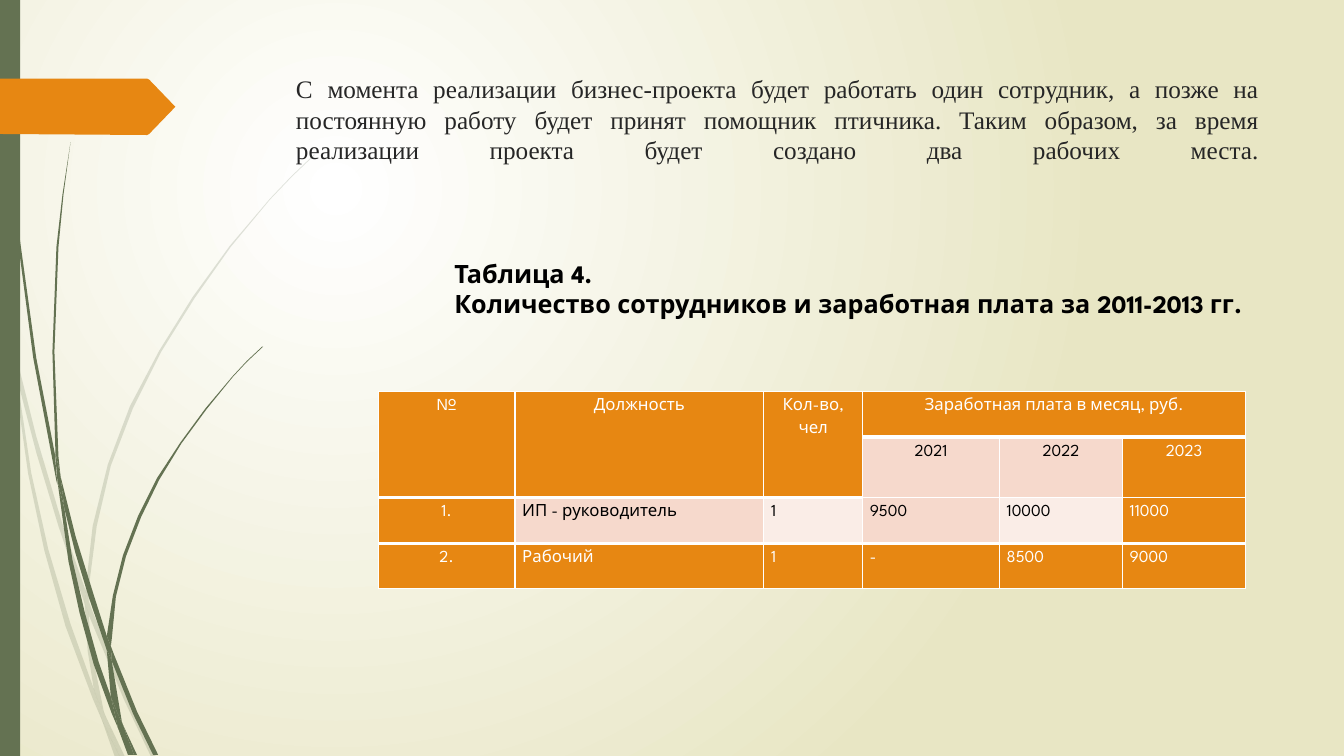
from dataclasses import dataclass

from lxml.etree import SubElement
from pptx import Presentation
from pptx.dml.color import RGBColor
from pptx.enum.shapes import MSO_SHAPE
from pptx.enum.text import MSO_ANCHOR, PP_ALIGN
from pptx.oxml.ns import qn
from pptx.util import Cm, Pt


@dataclass(frozen=True)
class Theme:
    green: str = "647252"
    orange: str = "E78712"
    rose: str = "F6D9CC"
    pale_rose: str = "FAEDE7"
    white: str = "FFFFFF"
    black: str = "000000"
    title_ink: str = "262626"
    sand: str = "E8E6C4"
    title_font: str = "Times New Roman"
    body_font: str = "League Spartan"
    heading_size: int = 18
    table_size: int = 12


THEME = Theme()
SLIDE_WIDTH, SLIDE_HEIGHT = 33.87, 19.05

# Outlines of the grass, in grid units of GRID centimetres from the slide corner.
GRID = 2.54
PALE_GRASS = [
    [(0.11, 3.5), (0.09, 3.22), (0, 2.82), (0, 2.99), (0.1, 3.44)],
    [(0.58, 5.22), (0.84, 5.99), (0.85, 5.86), (0.62, 5.2), (0.36, 4.33), (0.14, 3.45),
     (0.17, 3.76), (0.36, 4.49)],
    [(0.92, 6.07), (0.88, 5.96), (0.88, 6.1), (1.23, 6.94), (1.5, 7.51), (1.55, 7.51),
     (1.27, 6.92)],
    [(1.19, 7.51), (1.24, 7.51), (1.05, 7.11)],
    [(0.93, 6.83), (0.7, 6.19), (0.48, 5.45), (0.31, 4.69), (0.17, 3.76), (0.11, 3.5),
     (0.28, 4.7), (0.44, 5.46), (0.65, 6.21), (0.92, 6.93), (1.01, 7.14), (0.99, 7.07)],
    [(0.84, 5.99), (0.87, 6.46), (0.93, 6.83), (0.96, 6.92), (1.05, 7.11), (1.03, 7.06),
     (0.91, 6.46), (0.88, 6.1), (0.88, 6.08)],
    [(0.88, 5.84), (0.96, 5.22), (1.1, 4.62), (1.32, 4.05), (1.6, 3.49), (1.93, 2.96),
     (2.29, 2.45), (2.68, 1.98), (2.9, 1.75), (3.12, 1.54), (3.12, 1.53), (2.89, 1.75),
     (2.68, 1.97), (2.28, 2.44), (1.91, 2.95), (1.58, 3.48), (1.29, 4.03), (1.07, 4.61),
     (0.92, 5.22), (0.85, 5.84), (0.85, 5.86), (0.88, 5.96)],
    [(1.01, 7.14), (1.14, 7.51), (1.19, 7.51)],
    [(0.88, 6.08), (0.88, 6.1), (0.88, 5.96), (0.85, 5.86), (0.84, 5.99)],
    [(0.96, 6.92), (0.93, 6.83), (0.99, 7.07), (1.01, 7.14), (1.19, 7.51), (1.05, 7.11)],
]
DARK_GRASS = [
    [(0.07, 1.1), (0.17, 2.33), (0.33, 3.55), (0.56, 4.77), (0.57, 4.81), (0.55, 4.57),
     (0.55, 4.53), (0.36, 3.55), (0.19, 2.32), (0.08, 1.09), (0.05, 0.48), (0.04, 0),
     (0.03, 0), (0.04, 0.48)],
    [(0.88, 5.92), (1.06, 6.45), (1.06, 6.33), (1.06, 6.31), (0.93, 5.9), (0.75, 5.32),
     (0.6, 4.72), (0.64, 5.05), (0.75, 5.49)],
    [(1.13, 6.49), (1.1, 6.41), (1.11, 6.56), (1.32, 7.08), (1.52, 7.49), (1.57, 7.49),
     (1.36, 7.06)],
    [(1.1, 6.91), (0.98, 6.57), (0.84, 6.07), (0.72, 5.56), (0.64, 5.05), (0.57, 4.77),
     (0.68, 5.57), (0.79, 6.08), (0.93, 6.59), (1.11, 7.08), (1.17, 7.22), (1.16, 7.17)],
    [(0.6, 4.72), (0.58, 4.53), (0.54, 3.49), (0.58, 2.45), (0.63, 1.93), (0.7, 1.41),
     (0.62, 1.93), (0.56, 2.45), (0.52, 3.49), (0.55, 4.49)],
    [(1.33, 7.49), (1.36, 7.49), (1.22, 7.19)],
    [(0.57, 4.77), (0.64, 5.05), (0.6, 4.72), (0.55, 4.49), (0.55, 4.53)],
    [(1.11, 6.33), (1.15, 5.92), (1.25, 5.52), (1.4, 5.13), (1.58, 4.76), (1.8, 4.4),
     (2.05, 4.06), (2.31, 3.74), (2.45, 3.59), (2.61, 3.44), (2.6, 3.44), (2.45, 3.58),
     (2.31, 3.73), (2.04, 4.05), (1.79, 4.39), (1.56, 4.74), (1.37, 5.12), (1.22, 5.51),
     (1.12, 5.91), (1.06, 6.31), (1.1, 6.41)],
    [(1.17, 7.22), (1.27, 7.49), (1.31, 7.49)],
    [(1.06, 6.45), (1.1, 6.91), (1.16, 7.06), (1.22, 7.19), (1.21, 7.16), (1.11, 6.56),
     (1.09, 6.51)],
    [(1.06, 6.45), (1.09, 6.51), (1.11, 6.56), (1.1, 6.41), (1.06, 6.31), (1.06, 6.33)],
    [(1.16, 7.06), (1.1, 6.91), (1.16, 7.17), (1.17, 7.22), (1.3, 7.49), (1.33, 7.49),
     (1.22, 7.19)],
]
ARROW = [(1.74, 1.06), (1.48, 1.33), (1.46, 1.34), (0, 1.33), (0, 0.78), (1.46, 0.78),
         (1.48, 0.79)]

TITLE = ("С момента реализации бизнес-проекта будет работать один сотрудник, а позже на "
         "постоянную работу будет принят помощник птичника. Таким образом, за время "
         "реализации проекта будет создано два рабочих места.")
CAPTION = "Таблица 4.\nКоличество сотрудников и заработная плата за 2011-2013 гг."

COLUMN_WIDTHS = [3.45, 6.27, 2.49, 3.45, 3.1, 3.1]
ROW_HEIGHTS = [1.15, 1.3, 1.16, 1.14]
HEADER_ROWS = 2
MERGES = [(0, 0, 1, 0), (0, 1, 1, 1), (0, 2, 1, 2), (0, 3, 0, 5)]
STAFF = [
    ["№", "Должность", "Кол-во, чел", "Заработная плата в месяц, руб.", "", ""],
    ["", "", "", "2021", "2022", "2023"],
    ["1.", "ИП - руководитель", "1", "9500", "10000", "11000"],
    ["2.", "Рабочий", "1", "-", "8500", "9000"],
]
LIGHT_CELLS = {(1, 3): THEME.rose, (1, 4): THEME.rose, (2, 1): THEME.rose,
               (2, 2): THEME.pale_rose, (2, 3): THEME.rose, (2, 4): THEME.pale_rose}


def color(code):
    return RGBColor.from_string(code)


def paint(shape, code):
    shape.shadow.inherit = False
    shape.fill.solid()
    shape.fill.fore_color.rgb = color(code)
    shape.line.fill.background()


def style_paragraph(paragraph, font_name, size, code, bold=False):
    for run in paragraph.runs:
        run.font.name = font_name
        run.font.size = Pt(size)
        run.font.color.rgb = color(code)
        run.font.bold = bold


def add_background(slide):
    fill = slide.background.fill
    fill.gradient()
    for stop, code in zip(fill.gradient_stops, (THEME.white, THEME.sand)):
        stop.color.rgb = color(code)
    gradient = slide.element.find(".//" + qn("a:gradFill"))
    gradient.remove(gradient.find(qn("a:lin")))
    circle = SubElement(gradient, qn("a:path"), path="circle")
    SubElement(circle, qn("a:fillToRect"), l="50000", t="50000", r="100000", b="100000")


def add_outline(slide, outline, code):
    points = [(Cm(x * GRID), Cm(y * GRID)) for x, y in outline]
    builder = slide.shapes.build_freeform(*points[0])
    builder.add_line_segments(points[1:])
    shape = builder.convert_to_shape()
    paint(shape, code)
    return shape


def add_decoration(slide):
    for outline in PALE_GRASS:
        blade = add_outline(slide, outline, THEME.green)
        fill_color = blade.element.spPr.find(qn("a:solidFill"))[0]
        SubElement(fill_color, qn("a:alpha"), val="20000")
    for outline in DARK_GRASS:
        add_outline(slide, outline, THEME.green)
    stripe = slide.shapes.add_shape(MSO_SHAPE.RECTANGLE, 0, 0, Cm(0.51), Cm(SLIDE_HEIGHT))
    paint(stripe, THEME.green)
    add_outline(slide, ARROW, THEME.orange)


def add_text(slide, box, text):
    text_frame = slide.shapes.add_textbox(*map(Cm, box)).text_frame
    text_frame.word_wrap = True
    text_frame.vertical_anchor = MSO_ANCHOR.TOP
    text_frame.text = text
    return text_frame


def add_title(slide, box):
    # The closing line break makes the last line justified too.
    paragraph = add_text(slide, box, TITLE + "\v").paragraphs[0]
    paragraph.alignment = PP_ALIGN.JUSTIFY
    style_paragraph(paragraph, THEME.title_font, THEME.heading_size, THEME.title_ink)


def add_caption(slide, box):
    for paragraph in add_text(slide, box, CAPTION).paragraphs:
        paragraph._p.get_or_add_pPr().set("indent", str(Cm(1.27)))
        style_paragraph(paragraph, THEME.body_font, THEME.heading_size, THEME.black, bold=True)


def set_borders(cell, top, bottom):
    properties = cell._tc.get_or_add_tcPr()
    for side, weight in (("L", 1), ("R", 1), ("T", top), ("B", bottom)):
        line = SubElement(properties, qn("a:ln" + side), w=str(Pt(weight)))
        fill = SubElement(line, qn("a:solidFill"))
        SubElement(fill, qn("a:srgbClr"), val=THEME.white)


def fill_cell(cell, text, row, column):
    light = LIGHT_CELLS.get((row, column))
    set_borders(cell, top=3 if row == len(STAFF) - 1 else 1, bottom=3 if row == 0 else 1)
    cell.fill.solid()
    cell.fill.fore_color.rgb = color(light or THEME.orange)
    cell.margin_left = cell.margin_right = Cm(0.18)
    cell.margin_top = cell.margin_bottom = 0
    paragraph = cell.text_frame.paragraphs[0]
    if not text:
        # Keeps a merged-away cell from stretching its row.
        SubElement(paragraph._p, qn("a:endParaRPr"), sz=str(THEME.table_size * 100))
        return
    paragraph.text = text
    paragraph.line_spacing = 1.5
    centered = row < HEADER_ROWS or column == 0
    paragraph.alignment = PP_ALIGN.CENTER if centered else PP_ALIGN.LEFT
    style_paragraph(paragraph, THEME.body_font, THEME.table_size,
                    THEME.black if light else THEME.white)


def add_staff_table(slide, left, top):
    table = slide.shapes.add_table(
        len(ROW_HEIGHTS), len(COLUMN_WIDTHS), Cm(left), Cm(top),
        Cm(sum(COLUMN_WIDTHS)), Cm(sum(ROW_HEIGHTS))).table
    for column, width in zip(table.columns, COLUMN_WIDTHS):
        column.width = Cm(width)
    for row, height in zip(table.rows, ROW_HEIGHTS):
        row.height = Cm(height)
    for first_row, first_column, last_row, last_column in MERGES:
        table.cell(first_row, first_column).merge(table.cell(last_row, last_column))
    for row, texts in enumerate(STAFF):
        for column, text in enumerate(texts):
            fill_cell(table.cell(row, column), text, row, column)


def main():
    presentation = Presentation()
    presentation.slide_width, presentation.slide_height = Cm(SLIDE_WIDTH), Cm(SLIDE_HEIGHT)
    slide = presentation.slides.add_slide(presentation.slide_layouts[6])
    add_background(slide)
    add_decoration(slide)
    add_title(slide, (7.21, 1.73, 24.77, 3.56))
    add_staff_table(slide, 9.53, 9.86)
    add_caption(slide, (9.93, 6.38, 21.82, 2.57))
    presentation.save("out.pptx")


if __name__ == "__main__":
    main()
